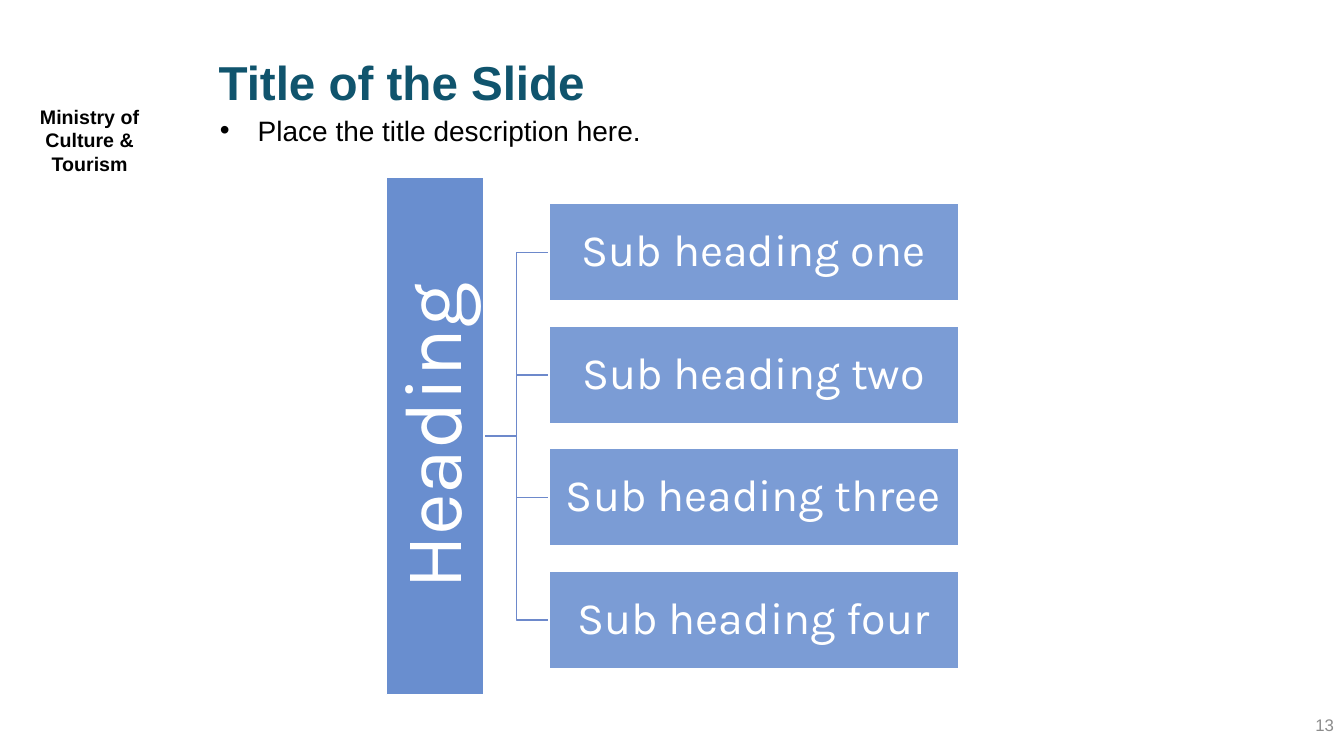
from pptx import Presentation
from pptx.dml.color import RGBColor
from pptx.enum.shapes import MSO_SHAPE
from pptx.enum.text import MSO_ANCHOR, MSO_AUTO_SIZE, PP_ALIGN
from pptx.oxml.ns import qn
from pptx.util import Cm, Pt
from lxml import etree

RECT = MSO_SHAPE.RECTANGLE
TOP, MIDDLE = MSO_ANCHOR.TOP, MSO_ANCHOR.MIDDLE
LEFT, CENTER, RIGHT = PP_ALIGN.LEFT, PP_ALIGN.CENTER, PP_ALIGN.RIGHT
NO_FIT = MSO_AUTO_SIZE.NONE


def rgb(value):
    return RGBColor.from_string(value)


class SlideBuilder:
    blue, pale_blue, teal = "4472C4", "6D89CB", "10546D"
    white, black, grey = "FFFFFF", "000000", "8C8C8C"
    text_font, diagram_font = "Arial", "Karla"

    def __init__(self, slide):
        self.s = slide

    def set_text(self, sp, text, size, color, font, align=LEFT, anchor=TOP,
                 bold=False, spacing=None, inset=None):
        tf = sp.text_frame
        tf.text = text
        tf.word_wrap = True
        tf.auto_size = NO_FIT
        tf.vertical_anchor = anchor
        if inset is not None:
            tf.margin_left = tf.margin_right = Cm(inset)
            tf.margin_top = tf.margin_bottom = Cm(inset)
        for p in tf.paragraphs:
            p.alignment = align
            p.space_before = Pt(0)
            if spacing:
                p.line_spacing = spacing
            for r in p.runs:
                r.font.name = font
                r.font.size = Pt(size)
                r.font.bold = bold
                r.font.color.rgb = rgb(color)

    def placeholder(self, sp, box, text, size, color, spacing, bold=False):
        sp.left, sp.top, sp.width, sp.height = map(Cm, box)
        pPr = sp.text_frame.paragraphs[0]._p.get_or_add_pPr()
        pPr.set("marL", "0")
        pPr.set("indent", "0")
        etree.SubElement(pPr, qn("a:buNone"))
        self.set_text(sp, text, size, color, self.text_font, bold=bold,
                      spacing=Pt(spacing), inset=0)

    def label(self, box, text, size, color, **style):
        sp = self.s.shapes.add_textbox(*map(Cm, box))
        self.set_text(sp, text, size, color, self.text_font, **style)

    def block(self, box, text, size, opacity, inset, rotation=0):
        sp = self.s.shapes.add_shape(RECT, *map(Cm, box))
        sp.shadow.inherit = False
        sp.rotation = rotation
        sp.fill.solid()
        sp.fill.fore_color.rgb = rgb(self.blue)
        color = sp._element.spPr.find(qn("a:solidFill"))[0]
        etree.SubElement(color, qn("a:alpha"), val=str(opacity * 1000))
        sp.line.color.rgb = rgb(self.white)
        sp.line.width = Pt(1)
        self.set_text(sp, text, size, self.white, self.diagram_font, CENTER,
                      MIDDLE, spacing=0.9, inset=inset)

    def branch(self, x1, y1, x2, y2):
        mid = (x1 + x2) / 2
        outline = self.s.shapes.build_freeform(Cm(x1), Cm(y1))
        outline.add_line_segments(
            [(Cm(x), Cm(y)) for x, y in ((mid, y1), (mid, y2), (x2, y2))],
            close=False)
        sp = outline.convert_to_shape()
        sp.shadow.inherit = False
        sp.fill.background()
        sp.line.color.rgb = rgb(self.pale_blue)
        sp.line.width = Pt(1)


def main():
    prs = Presentation()
    prs.slide_width, prs.slide_height = Cm(33.87), Cm(19.05)
    s = prs.slides.add_slide(prs.slide_layouts[1])
    b = SlideBuilder(s)

    # Title and description
    b.placeholder(s.shapes.title, (5.51, 1.35, 21.29, 1.35),
                  "Title of the Slide", 34, b.teal, 40, bold=True)
    b.placeholder(s.placeholders[1], (5.54, 3.12, 21.46, 1.73),
                  "Place the title description here.", 20, b.black, 16.5)

    # Ministry name and slide number
    b.label((0, 2.51, 4.52, 1.45), "Ministry of\nCulture & Tourism", 14,
            b.black, align=CENTER, bold=True)
    b.label((26.25, 17.75, 7.62, 1.02), "13", 12, b.grey, align=RIGHT,
            anchor=MIDDLE)

    # Hierarchy: branches first, then the blocks
    names = ("one", "two", "three", "four")
    length, thickness = 13.03, 2.46
    trunk_x, trunk_y = 12.2, 10.99
    sub_x, sub_width, pitch = 13.84, 10.31, 3.09
    centers = [trunk_y + (i - (len(names) - 1) / 2) * pitch
               for i in range(len(names))]
    for y in centers:
        b.branch(trunk_x, trunk_y, sub_x, y)
    b.block((trunk_x - (thickness + length) / 2, trunk_y - thickness / 2,
             length, thickness), "Heading", 58, 80, 0.1, rotation=270)
    for name, y in zip(names, centers):
        b.block((sub_x, y - thickness / 2, sub_width, thickness),
                f"Sub heading {name}", 32, 70, 0.05)

    prs.save("out.pptx")


if __name__ == "__main__":
    main()
